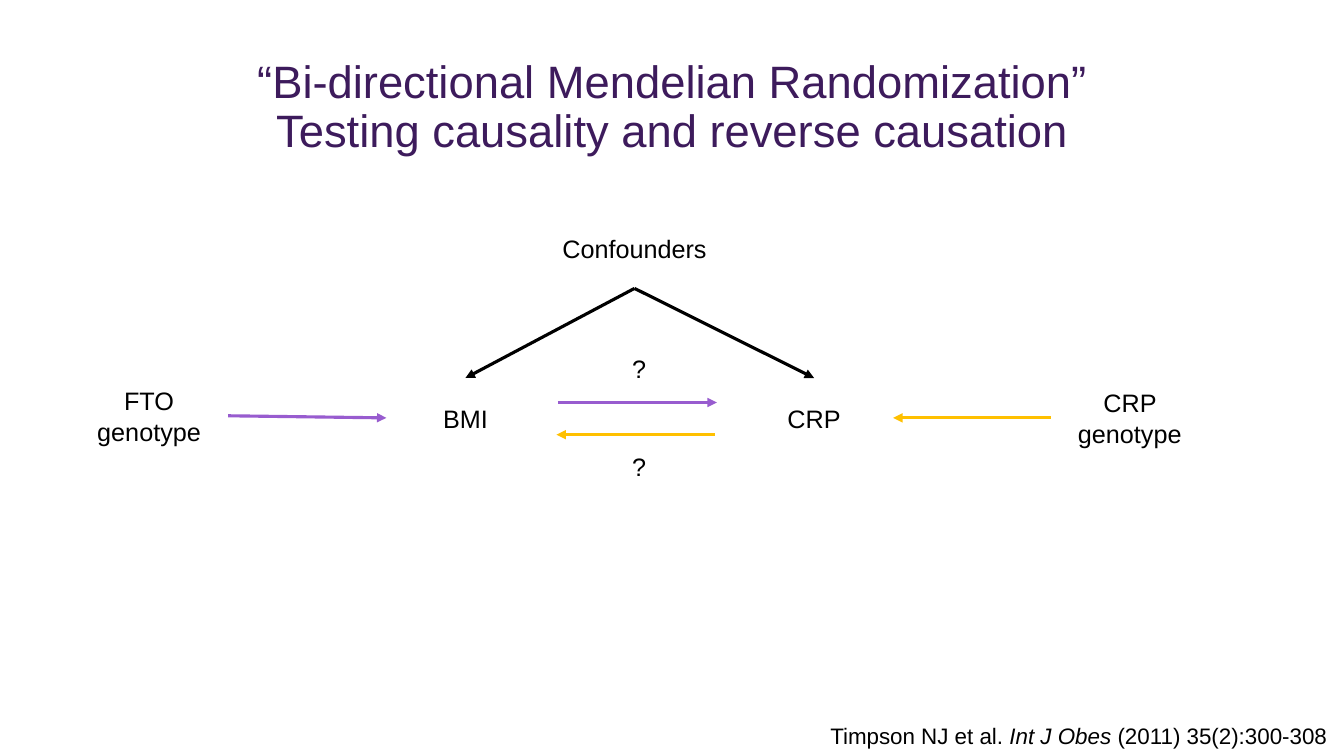
import pptx
import pptx.util
import pptx.dml.color
import pptx.enum.shapes
import pptx.enum.text
import pptx.oxml
import pptx.oxml.ns

Pt = pptx.util.Pt
RGB = pptx.dml.color.RGBColor.from_string
ALIGN = pptx.enum.text.PP_ALIGN
MIDDLE = pptx.enum.text.MSO_ANCHOR.MIDDLE
COLORS = {"title": "3D1B5C", "text": "000000", "box": "FFFFFF",
          "purple": "985CCF", "gold": "FFC000", "black": "000000"}


def style(p, size, color="text", align=ALIGN.LEFT):
    p.alignment = align
    p.font.size = Pt(size)
    p.font.name = "Arial"
    p.font.color.rgb = RGB(COLORS[color])


def add_arrow(shapes, color, x1, y1, x2, y2):
    line = shapes.add_connector(pptx.enum.shapes.MSO_CONNECTOR.STRAIGHT,
                                Pt(x1), Pt(y1), Pt(x2), Pt(y2))
    line.line.color.rgb = RGB(COLORS[color])
    line.line.width = Pt(2.25)
    tail = pptx.oxml.parse_xml('<a:tailEnd %s type="triangle"/>' % pptx.oxml.ns.nsdecls("a"))
    line.line._get_or_add_ln().append(tail)
    line._element.spPr.append(pptx.oxml.parse_xml("<a:effectLst %s/>" % pptx.oxml.ns.nsdecls("a")))
    return line


prs = pptx.Presentation()
prs.slide_width, prs.slide_height = Pt(960), Pt(540)
s = prs.slides.add_slide(prs.slide_layouts[5])

# Title
title = s.shapes.title
title.left, title.top, title.width, title.height = Pt(156), Pt(32.5), Pt(648), Pt(90)
tf = title.text_frame
tf.text = "“Bi-directional Mendelian Randomization”\vTesting causality and reverse causation"
tf.word_wrap = True
tf.vertical_anchor = MIDDLE
tf.margin_left = tf.margin_right = tf.margin_top = tf.margin_bottom = 0
style(tf.paragraphs[0], 32.4, "title", ALIGN.CENTER)
tf.paragraphs[0].line_spacing = 0.9

# Variables of the causal diagram
nodes = {}
for name, text, x, y, w, filled in [
        ("confounders", "Confounders", 388, 149, 130.5, False),
        ("fto", "FTO genotype", 50, 268.5, 113, True),
        ("bmi", "BMI", 276, 270, 113, True),
        ("crp", "CRP", 525, 270, 113, True),
        ("crp_genotype", "CRP genotype", 750.5, 270, 113, True)]:
    sp = s.shapes.add_shape(pptx.enum.shapes.MSO_SHAPE.RECTANGLE, Pt(x), Pt(y), Pt(w), Pt(57))
    sp.shadow.inherit = False
    sp.line.fill.background()
    if filled:
        sp.fill.solid()
        sp.fill.fore_color.rgb = RGB(COLORS["box"])
    else:
        sp.fill.background()
    tf = sp.text_frame
    tf.text = text
    tf.word_wrap = True
    tf.vertical_anchor = MIDDLE
    style(tf.paragraphs[0], 18, align=ALIGN.CENTER)
    nodes[name] = sp

# Arrows joining the variables (sides: 0 top, 1 left, 2 bottom, 3 right)
for color, start, side, end, end_side in [
        ("purple", "fto", 3, "bmi", 1),
        ("gold", "crp_genotype", 1, "crp", 3),
        ("black", "confounders", 2, "bmi", 0),
        ("black", "confounders", 2, "crp", 0)]:
    line = add_arrow(s.shapes, color, 0, 0, 0, 0)
    line.begin_connect(nodes[start], side)
    line.end_connect(nodes[end], end_side)

# The two directions in question
add_arrow(s.shapes, "purple", 398.5, 287.5, 512, 287.5)
add_arrow(s.shapes, "gold", 510.5, 310.5, 397.5, 310.5)

# Question marks and citation
for x, y, w, h, size, runs in [
        (444.5, 248.5, 24.5, 29, 18, ["?"]),
        (444.5, 319, 24.5, 29, 18, ["?"]),
        (586, 512.5, 374, 26.5, 16,
         ["Timpson NJ et al. ", "Int J Obes ", "(2011) 35(2):300-308"])]:
    tf = s.shapes.add_textbox(Pt(x), Pt(y), Pt(w), Pt(h)).text_frame
    tf.word_wrap = False
    p = tf.paragraphs[0]
    style(p, size)
    for text in runs:
        r = p.add_run()
        r.text = text
        if text.startswith("Int J"):
            r.font.italic = True

prs.save("out.pptx")
